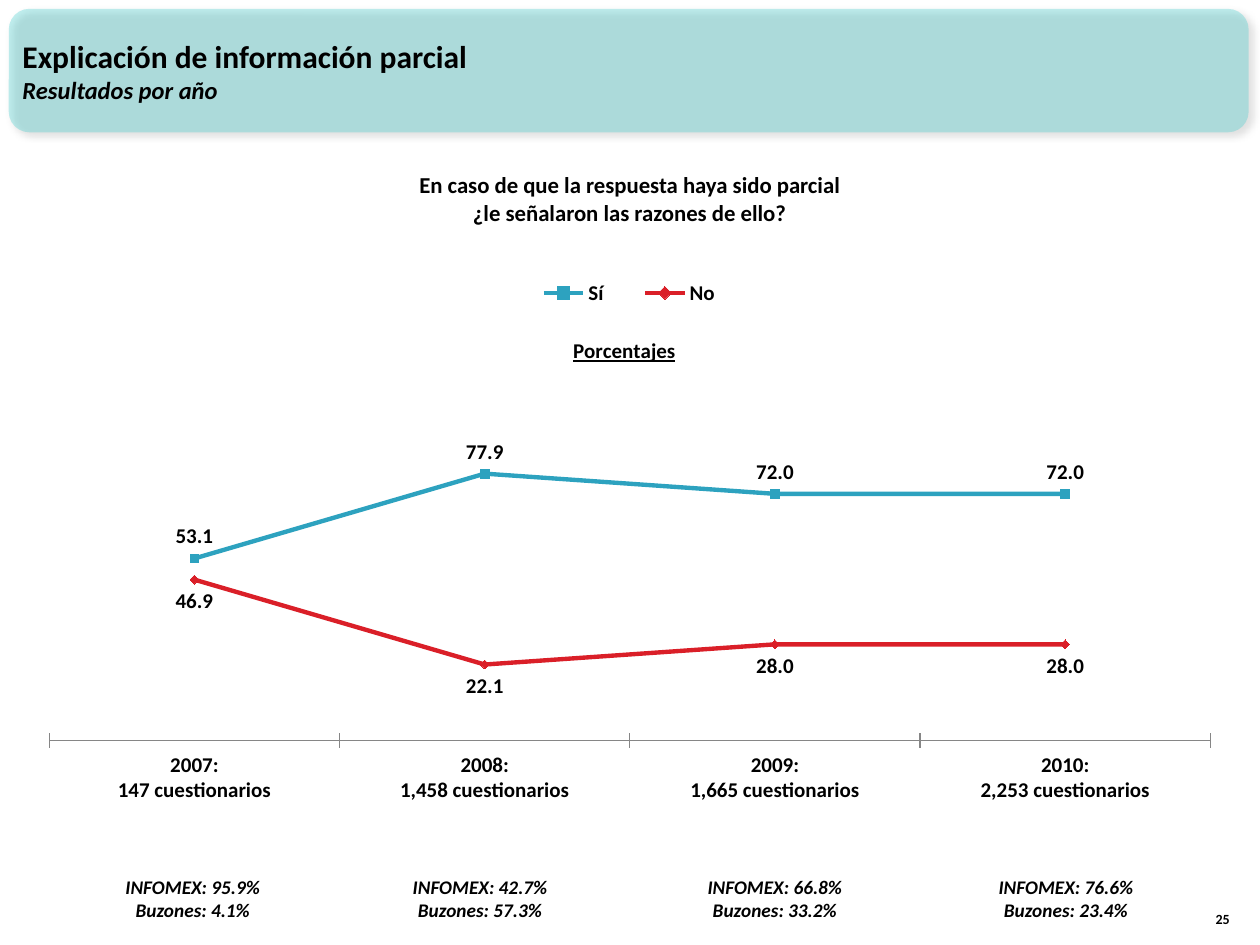
from lxml import etree
from pptx import Presentation
from pptx.chart.data import CategoryChartData
from pptx.dml.color import RGBColor
from pptx.enum.chart import (XL_CHART_TYPE, XL_LABEL_POSITION, XL_LEGEND_POSITION,
                             XL_MARKER_STYLE, XL_TICK_LABEL_POSITION, XL_TICK_MARK)
from pptx.enum.shapes import MSO_SHAPE
from pptx.enum.text import MSO_ANCHOR, PP_ALIGN
from pptx.oxml import parse_xml
from pptx.oxml.ns import nsdecls, qn
from pptx.util import Inches, Pt

LEFT, CENTER, RIGHT = PP_ALIGN.LEFT, PP_ALIGN.CENTER, PP_ALIGN.RIGHT
TOP, MIDDLE, BOTTOM = MSO_ANCHOR.TOP, MSO_ANCHOR.MIDDLE, MSO_ANCHOR.BOTTOM
ABOVE, BELOW = XL_LABEL_POSITION.ABOVE, XL_LABEL_POSITION.BELOW
SQUARE, DIAMOND = XL_MARKER_STYLE.SQUARE, XL_MARKER_STYLE.DIAMOND

FONT = "Calibri"
BLACK = RGBColor(0x00, 0x00, 0x00)
AQUA = RGBColor(0x33, 0xCC, 0xCC)
TEAL = RGBColor(0x2D, 0xA2, 0xBF)
RED = RGBColor(0xDA, 0x1F, 0x28)
GRAY = RGBColor(0x86, 0x86, 0x86)

# Content
HEADING = [("Explicación de información parcial", {"size": Pt(18)}),
           ("Resultados por año", {"size": Pt(14), "italic": True})]
QUESTION = ["En caso de que la respuesta haya sido parcial",
            "¿le señalaron las razones de ello?"]
PAGE_NUMBER = "25"
CHART_TITLE = "Porcentajes"
YEARS = [("2007", "147"), ("2008", "1,458"), ("2009", "1,665"), ("2010", "2,253")]
SERIES = [("Sí", (53.1, 77.9, 72.0, 72.0), TEAL, SQUARE, ABOVE),
          ("No", (46.9, 22.1, 28.0, 28.0), RED, DIAMOND, BELOW)]
# Left edge, share by each channel
CHANNELS = [(0.74, "95.9%", "4.1%"), (3.02, "42.7%", "57.3%"),
            (5.36, "66.8%", "33.2%"), (7.67, "76.6%", "23.4%")]


def set_font(font, **values):
    values = {"name": FONT, "bold": True, **values}
    for name, value in values.items():
        setattr(font, name, value)
    font.color.rgb = BLACK


def add_text(page, place, lines, align=LEFT, anchor=TOP):
    box = page.shapes.add_textbox(*map(Inches, place))
    frame = box.text_frame
    frame.word_wrap = True
    frame.vertical_anchor = anchor
    for index, (text, values) in enumerate(lines):
        para = frame.paragraphs[0] if index == 0 else frame.add_paragraph()
        para.alignment = align
        span = para.add_run()
        span.text = text
        set_font(span.font, **values)


def add_banner(page):
    banner = page.shapes.add_shape(MSO_SHAPE.ROUNDED_RECTANGLE,
                                   *map(Inches, (0.07, 0.07, 9.84, 0.98)))
    banner.fill.solid()
    banner.fill.fore_color.rgb = AQUA
    banner.line.fill.background()
    properties = banner.element.spPr
    color = properties.find(qn("a:solidFill"))[0]
    etree.SubElement(color, qn("a:alpha"), val="30000")
    properties.append(parse_xml(
        f'<a:effectLst {nsdecls("a")}><a:outerShdw blurRad="{Pt(4)}" dist="{Pt(3)}" '
        'dir="2700000" algn="tl" rotWithShape="0"><a:srgbClr val="000000">'
        '<a:alpha val="40000"/></a:srgbClr></a:outerShdw></a:effectLst>'))


def make_layout(x, y, width=None, height=None, inner=False):
    """Manual placement, in fractions of the chart area."""
    target = '<c:layoutTarget val="inner"/>' if inner else ""
    sizes = "" if width is None else f'<c:w val="{width}"/><c:h val="{height}"/>'
    return parse_xml(
        f'<c:layout {nsdecls("c")}><c:manualLayout>{target}<c:xMode val="edge"/>'
        f'<c:yMode val="edge"/><c:x val="{x}"/><c:y val="{y}"/>{sizes}'
        '</c:manualLayout></c:layout>')


def place_part(element, before, layout):
    """Put the layout just ahead of the named child, replacing any other."""
    for old in element.findall(qn("c:layout")):
        element.remove(old)
    element.find(qn(before)).addprevious(layout)


def add_line_chart(page):
    data = CategoryChartData(number_format="0.0")
    data.categories = [f"{year}:\n{count} cuestionarios" for year, count in YEARS]
    for name, values, *_ in SERIES:
        data.add_series(name, values)
    chart = page.shapes.add_chart(XL_CHART_TYPE.LINE_MARKERS,
                                  *map(Inches, (0.23, 2.1, 9.53, 4.49)), data).chart
    set_font(chart.font, size=Pt(12))

    # Title, legend and plot area
    chart.has_title = True
    span = chart.chart_title.text_frame.paragraphs[0].add_run()
    span.text = CHART_TITLE
    set_font(span.font, size=Pt(12), underline=True)
    chart.chart_title.include_in_layout = False
    chart.has_legend = True
    chart.legend.position = XL_LEGEND_POSITION.TOP
    chart.legend.include_in_layout = False
    title = chart.chart_title.element if hasattr(chart.chart_title, "element") \
        else chart.element.find(".//" + qn("c:title"))
    place_part(title, "c:overlay", make_layout(0.45, 0.12))
    place_part(chart.legend.element if hasattr(chart.legend, "element")
               else chart.element.find(".//" + qn("c:legend")),
               "c:overlay", make_layout(0.4, 0.02, 0.2, 0.06))
    place_part(chart.element.find(".//" + qn("c:plotArea")), "c:lineChart",
               make_layout(0.017, 0.236, 0.967, 0.605, inner=True))

    # Axes
    values_axis = chart.value_axis
    values_axis.minimum_scale, values_axis.maximum_scale = 0, 100
    values_axis.major_unit = 20
    values_axis.has_major_gridlines = False
    values_axis.visible = False
    years_axis = chart.category_axis
    years_axis.major_tick_mark = XL_TICK_MARK.CROSS
    years_axis.tick_label_position = XL_TICK_LABEL_POSITION.LOW
    years_axis.format.line.color.rgb = GRAY
    years_axis.format.line.width = Pt(0.75)

    # Series
    for series, (_, _, color, style, position) in zip(chart.plots[0].series, SERIES):
        series.smooth = False
        series.format.line.color.rgb = color
        series.format.line.width = Pt(2.5)
        marker = series.marker
        marker.style, marker.size = style, 5
        marker.format.fill.solid()
        marker.format.fill.fore_color.rgb = color
        marker.format.line.color.rgb = color
        labels = series.data_labels
        labels.show_value = True
        labels.position = position
        labels.number_format = "0.0"
        labels.number_format_is_linked = False
        set_font(labels.font, size=Pt(12))


def main():
    deck = Presentation()
    deck.slide_width, deck.slide_height = Inches(10), Inches(7.5)
    page = deck.slides.add_slide(deck.slide_layouts[6])
    add_banner(page)
    add_text(page, (0.08, 0.09, 9.17, 0.94), HEADING, anchor=MIDDLE)
    add_text(page, (9.46, 7.01, 0.4, 0.4), [(PAGE_NUMBER, {"size": Pt(8)})], RIGHT, BOTTOM)
    add_line_chart(page)
    add_text(page, (0.89, 1.31, 8.21, 0.54),
             [(line, {"size": Pt(13)}) for line in QUESTION], CENTER)
    for left, infomex, mailboxes in CHANNELS:
        lines = (f"INFOMEX: {infomex}", f"Buzones: {mailboxes}")
        add_text(page, (left, 6.9, 1.58, 0.47),
                 [(line, {"size": Pt(11), "italic": True}) for line in lines], CENTER)
    deck.save("out.pptx")


if __name__ == "__main__":
    main()
